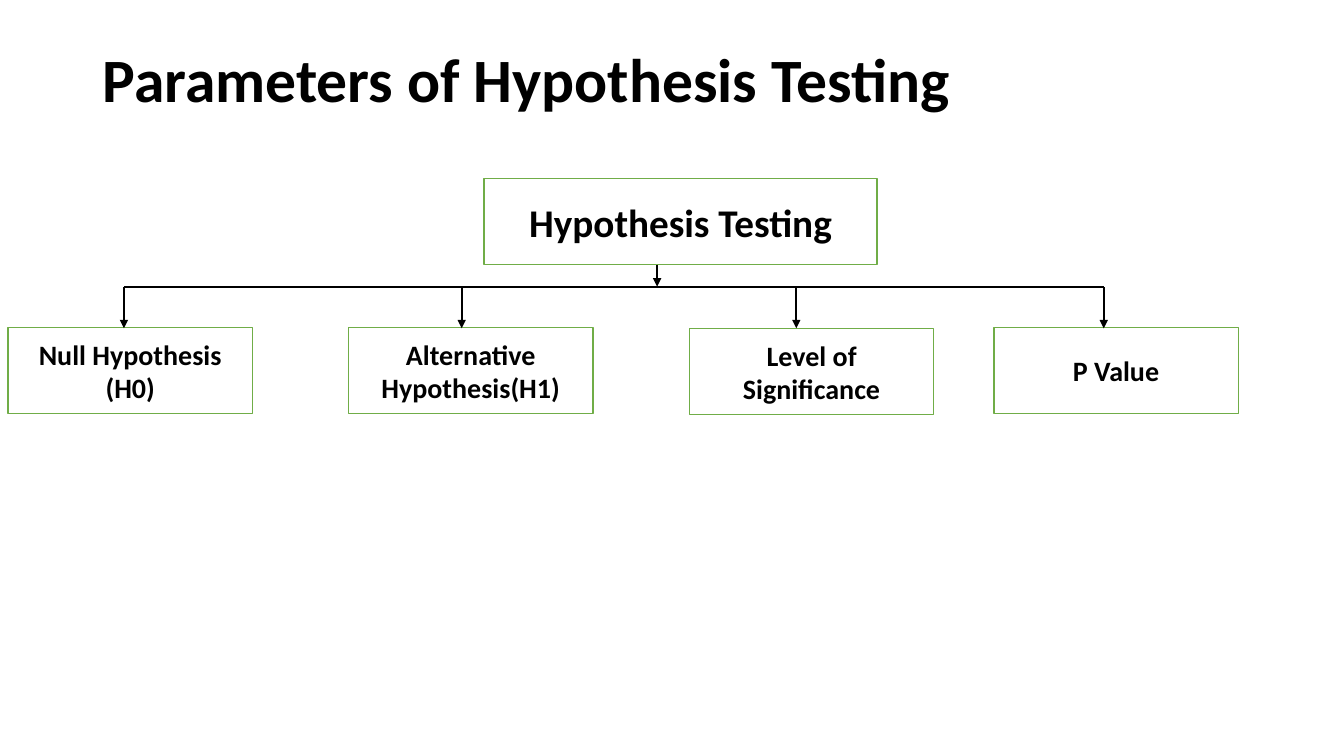
from dataclasses import dataclass

from lxml.etree import SubElement
from pptx import Presentation
from pptx.dml.color import RGBColor
from pptx.enum.shapes import MSO_CONNECTOR, MSO_SHAPE
from pptx.enum.text import MSO_ANCHOR, PP_ALIGN
from pptx.oxml.ns import qn
from pptx.util import Pt


@dataclass(frozen=True)
class Theme:
    font: str = "Calibri"
    ink: RGBColor = RGBColor(0, 0, 0)
    paper: RGBColor = RGBColor(255, 255, 255)
    border: RGBColor = RGBColor(0x70, 0xAD, 0x47)
    title_size: int = 44
    root_size: int = 28
    branch_size: int = 20


theme = Theme()

prs = Presentation()
prs.slide_width, prs.slide_height = Pt(960), Pt(540)
s = prs.slides.add_slide(prs.slide_layouts[6])


def write(sp, text, size, align):
    """Set bold, vertically centred text in a shape."""
    tf = sp.text_frame
    tf.text = text
    tf.word_wrap = True
    tf.vertical_anchor = MSO_ANCHOR.MIDDLE
    p = tf.paragraphs[0]
    p.alignment = align
    font = p.runs[0].font
    font.name, font.size, font.bold = theme.font, Pt(size), True
    font.color.rgb = theme.ink


def add_line(x1, y1, x2, y2, arrow=True):
    cx = s.shapes.add_connector(MSO_CONNECTOR.STRAIGHT, Pt(x1), Pt(y1), Pt(x2), Pt(y2))
    cx.line.color.rgb = theme.ink
    cx.line.width = Pt(1.5)
    if arrow:
        SubElement(cx.line._get_or_add_ln(), qn("a:tailEnd"), type="triangle")
    SubElement(cx._element.spPr, qn("a:effectLst"))


title = s.shapes.add_textbox(Pt(66.2), Pt(28.8), Pt(828), Pt(60.5))
write(title, "Parameters of Hypothesis Testing", theme.title_size, PP_ALIGN.LEFT)
title.text_frame.paragraphs[0].line_spacing = 0.9

# Boxes: text, left, top, width, type size
box_height = 61.5
branch_top, branch_width = 234, 174.5
boxes = [
    ("Hypothesis Testing", 345.6, 127.5, 281, theme.root_size),
    ("Null Hypothesis (H0)", 5.8, branch_top, branch_width, theme.branch_size),
    ("Alternative Hypothesis(H1)", 249, branch_top, branch_width, theme.branch_size),
    ("Level of Significance", 492.5, branch_top + 0.7, branch_width, theme.branch_size),
    ("P Value", 710, branch_top, branch_width, theme.branch_size),
]
for text, left, top, width, size in boxes:
    sp = s.shapes.add_shape(MSO_SHAPE.RECTANGLE, Pt(left), Pt(top), Pt(width), Pt(box_height))
    sp.shadow.inherit = False
    sp.fill.solid()
    sp.fill.fore_color.rgb = theme.paper
    sp.line.color.rgb = theme.border
    sp.line.width = Pt(1)
    write(sp, text, size, PP_ALIGN.CENTER)

# Arrows from the root to the crossbar and on to each branch
bar_y = 205.2
arrow_xs = [88.5, 329.8, 568.8, 788.4]
add_line(469.4, 189, 469.4, bar_y - 0.5)
add_line(arrow_xs[0], bar_y, arrow_xs[-1], bar_y, arrow=False)
for x in arrow_xs:
    add_line(x, bar_y, x, branch_top + 0.5)

prs.save("out.pptx")
